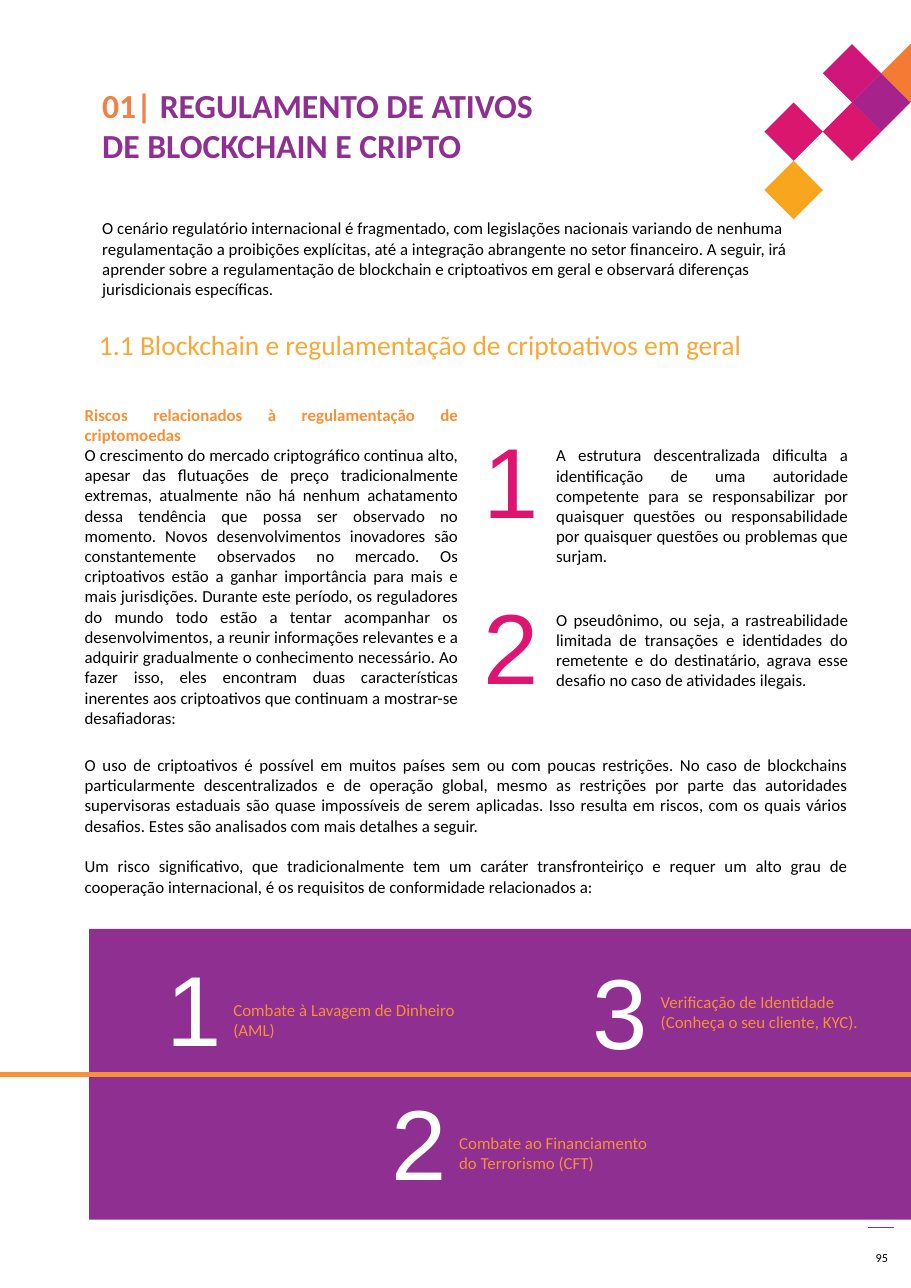
from pptx import Presentation
from pptx.dml.color import RGBColor
from pptx.enum.shapes import MSO_CONNECTOR as CONN, MSO_SHAPE as SHAPE
from pptx.enum.text import MSO_ANCHOR as ANCHOR, PP_ALIGN as ALIGN
from pptx.util import Inches, Pt
from lxml import etree

WIDTH, HEIGHT = 8.27, 11.69
COLORS = {
    "black": "000000", "white": "FFFFFF", "purple": "8E2F91",
    "orange": "F79037", "heading": "F9A835", "number": "F48043",
    "pink": "DD1470", "tile_orange": "F47B34", "tile_yellow": "F9A61F",
    "tile_pink": "DB166E", "tile_violet": "A7228B", "tile_magenta": "CF167B",
}

TITLE = [("01| ", "number"),
         ("REGULAMENTO DE ATIVOS DE BLOCKCHAIN E CRIPTO", "purple")]
INTRO = "O cenário regulatório internacional é fragmentado, com legislações nacionais variando de nenhuma regulamentação a proibições explícitas, até a integração abrangente no setor financeiro. A seguir, irá aprender sobre a regulamentação de blockchain e criptoativos em geral e observará diferenças jurisdicionais específicas."
SECTION = "1.1 Blockchain e regulamentação de criptoativos em geral"
RISKS_HEADING = "Riscos relacionados à regulamentação de criptomoedas"
RISKS = "O crescimento do mercado criptográfico continua alto, apesar das flutuações de preço tradicionalmente extremas, atualmente não há nenhum achatamento dessa tendência que possa ser observado no momento. Novos desenvolvimentos inovadores são constantemente observados no mercado. Os criptoativos estão a ganhar importância para mais e mais jurisdições. Durante este período, os reguladores do mundo todo estão a tentar acompanhar os desenvolvimentos, a reunir informações relevantes e a adquirir gradualmente o conhecimento necessário. Ao fazer isso, eles encontram duas características inerentes aos criptoativos que continuam a mostrar-se desafiadoras:"
CHALLENGES = [
    "A estrutura descentralizada dificulta a identificação de uma autoridade competente para se responsabilizar por quaisquer questões ou responsabilidade por quaisquer questões ou problemas que surjam.",
    "O pseudônimo, ou seja, a rastreabilidade limitada de transações e identidades do remetente e do destinatário, agrava esse desafio no caso de atividades ilegais.",
]
CONCLUSION = [
    "O uso de criptoativos é possível em muitos países sem ou com poucas restrições. No caso de blockchains particularmente descentralizados e de operação global, mesmo as restrições por parte das autoridades supervisoras estaduais são quase impossíveis de serem aplicadas. Isso resulta em riscos, com os quais vários desafios. Estes são analisados com mais detalhes a seguir.",
    "Um risco significativo, que tradicionalmente tem um caráter transfronteiriço e requer um alto grau de cooperação internacional, é os requisitos de conformidade relacionados a:",
]
# label paragraphs, label box, digit position
REQUIREMENTS = [
    (["Combate à Lavagem de Dinheiro (AML)"], (2.02, 9.02, 2.27, 0.5), (1.41, 8.55)),
    (["Combate ao Financiamento do Terrorismo (CFT)"], (4.07, 10.23, 1.93, 0.5), (3.46, 9.76)),
    (["Verificação de Identidade", "(Conheça o seu cliente, KYC)."],
     (5.9, 8.95, 2.06, 0.53), (5.28, 8.57)),
]
DIGIT_SIZE = (0.72, 1.19)
CHALLENGE_DIGITS = [(4.29, 3.75), (4.29, 5.26)]

# column, row and colour on a grid of half diamonds
TILES = [(4, 0, "tile_orange"), (0, 4, "tile_yellow"), (0, 2, "tile_pink"),
         (2, 2, "tile_pink"), (3, 1, "tile_violet"), (2, 0, "tile_magenta")]
TILE_LEFT, TILE_TOP, TILE_HALF = 6.94, 0.4, 0.265


def rgb(name):
    return RGBColor.from_string(COLORS[name])


def add_text(s, box, paragraphs, size=11, color="black", font="Calibri",
             align=ALIGN.LEFT, gap=0, bold=False):
    """Add a text box; gap is the space in points between paragraphs."""
    tf = s.shapes.add_textbox(*map(Inches, box)).text_frame
    tf.word_wrap = True
    for i, text in enumerate(paragraphs):
        p = tf.add_paragraph() if i else tf.paragraphs[0]
        p.text = text
        p.alignment = align
        p.space_before = Pt(gap if i else 0)
        p.font.name, p.font.size, p.font.bold = font, Pt(size), bold
        p.font.color.rgb = rgb(color)
    return tf


def add_digit(s, position, number, color):
    add_text(s, position + DIGIT_SIZE, [str(number)], 65, color, "Arial")


def add_block(s, kind, box, color):
    sp = s.shapes.add_shape(kind, *map(Inches, box))
    sp.shadow.inherit = False
    sp.fill.solid()
    sp.fill.fore_color.rgb = rgb(color)
    sp.line.fill.background()


def add_rule(s, x1, x2, y, color, width):
    line = s.shapes.add_connector(CONN.STRAIGHT, *map(Inches, (x1, y, x2, y)))
    line.line.color.rgb = rgb(color)
    line.line.width = Pt(width)
    sp_pr = line.line._get_or_add_ln().getparent()
    etree.SubElement(sp_pr, "{http://schemas.openxmlformats.org/drawingml/2006/main}effectLst")


def main():
    prs = Presentation()
    prs.slide_width, prs.slide_height = Inches(WIDTH), Inches(HEIGHT)
    s = prs.slides.add_slide(prs.slide_layouts[6])

    add_rule(s, 7.88, 8.12, 11.14, "purple", 0.75)
    for col, row, color in TILES:
        add_block(s, SHAPE.DIAMOND,
                  (TILE_LEFT + col * TILE_HALF, TILE_TOP + row * TILE_HALF,
                   2 * TILE_HALF, 2 * TILE_HALF), color)

    p = add_text(s, (0.83, 0.72, 4.34, 1.32), [""], 22, bold=True).paragraphs[0]
    for text, color in TITLE:
        r = p.add_run()
        r.text = text
        r.font.color.rgb = rgb(color)

    page = add_text(s, (7.8, 11.16, 0.41, 0.51), ["95"], 8, align=ALIGN.CENTER)
    page.vertical_anchor = ANCHOR.MIDDLE
    add_text(s, (0.83, 1.93, 6.6, 0.85), [INTRO])
    add_text(s, (0.8, 2.93, 6.62, 0.52), [SECTION], 18, "heading")

    risks = add_text(s, (0.67, 3.62, 3.59, 3.1), [RISKS_HEADING, RISKS],
                     align=ALIGN.JUSTIFY)
    heading = risks.paragraphs[0].font
    heading.bold = True
    heading.color.rgb = rgb("orange")

    add_text(s, (4.95, 3.99, 2.85, 2.35), CHALLENGES, align=ALIGN.JUSTIFY, gap=28)
    for number, position in enumerate(CHALLENGE_DIGITS, 1):
        add_digit(s, position, number, "pink")
    add_text(s, (0.67, 6.8, 7.13, 1.4), CONCLUSION, align=ALIGN.JUSTIFY, gap=13.4)

    add_block(s, SHAPE.RECTANGLE, (0.81, 8.43, WIDTH - 0.81, 2.64), "purple")
    add_rule(s, 0, WIDTH, 9.75, "orange", 3)
    for number, (label, box, position) in enumerate(REQUIREMENTS, 1):
        add_text(s, box, label, color="orange")
        add_digit(s, position, number, "white")

    prs.save("out.pptx")


if __name__ == "__main__":
    main()
